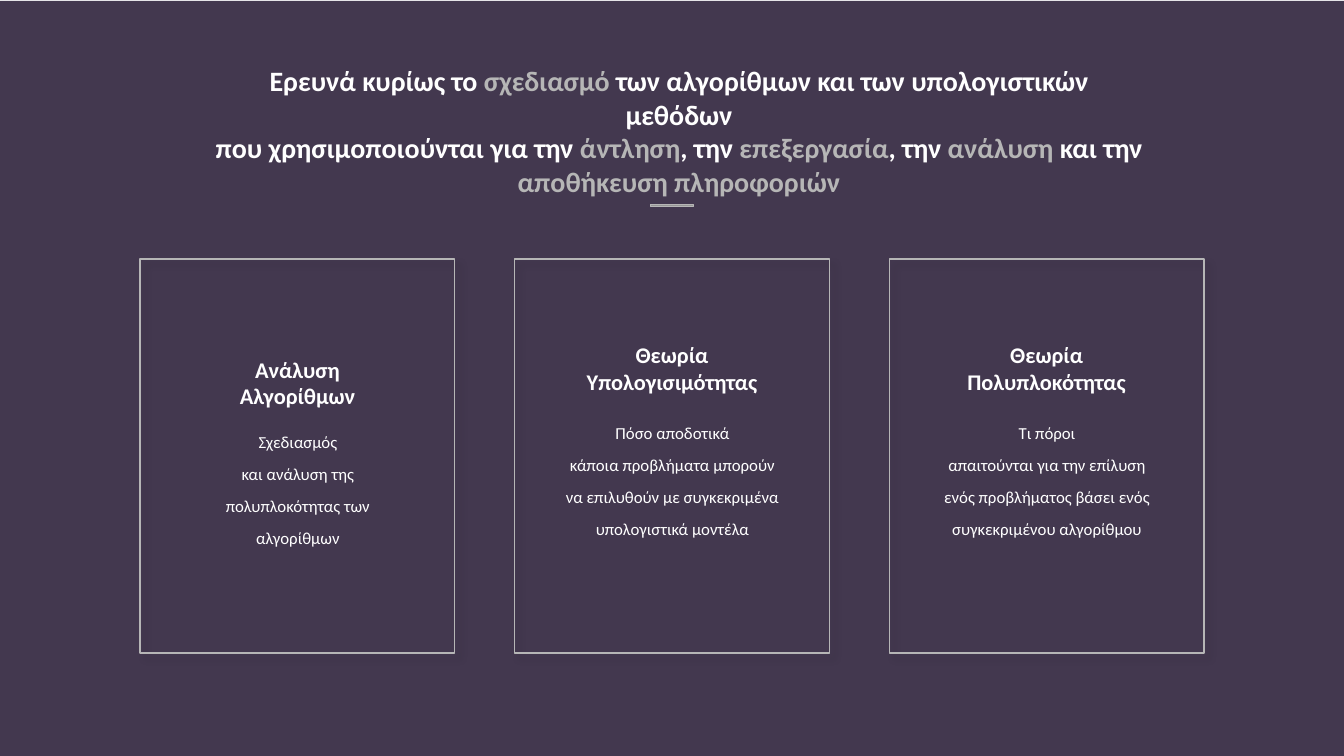
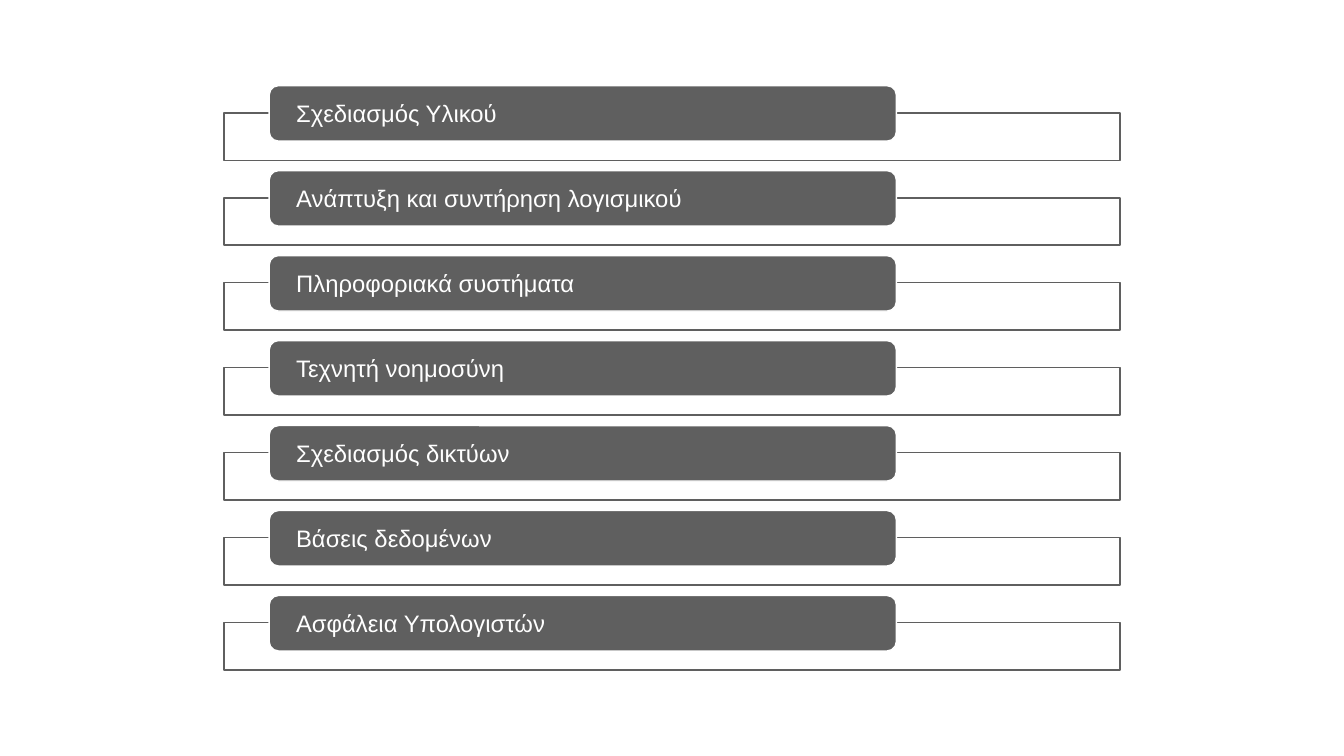
"""Build two slides on the research areas and fields of computer science."""
from dataclasses import dataclass

from lxml import etree
from pptx import Presentation
from pptx.dml.color import RGBColor
from pptx.enum.shapes import MSO_SHAPE
from pptx.enum.text import MSO_ANCHOR, MSO_AUTO_SIZE, PP_ALIGN
from pptx.oxml.ns import qn
from pptx.util import Inches, Pt

RECT = MSO_SHAPE.RECTANGLE
ROUNDED = MSO_SHAPE.ROUNDED_RECTANGLE
CENTER, LEFT = PP_ALIGN.CENTER, PP_ALIGN.LEFT
TOP, MIDDLE = MSO_ANCHOR.TOP, MSO_ANCHOR.MIDDLE
NO_AUTOFIT = MSO_AUTO_SIZE.NONE
TITLE_ONLY, BLANK = 5, 6

COLORS = {
    "night": "140724",
    "white": "FFFFFF",
    "silver": "B6B6B6",
    "rule": "969696",
    "bar": "5F5F5F",
}


@dataclass(frozen=True)
class Box:
    left: float
    top: float
    width: float
    height: float


@dataclass(frozen=True)
class TextStyle:
    font: str
    size: int
    bold: bool = False
    align: PP_ALIGN = CENTER
    spacing: float = 1.0


@dataclass(frozen=True)
class Card:
    heading: str
    lines: tuple[str, ...]
    heading_top: float = 3.34
    body_top: float = 4.02


HEADLINE_STYLE = TextStyle("Calibri", 20, bold=True)
HEADING_STYLE = TextStyle("Calibri", 16, bold=True)
BODY_STYLE = TextStyle("Calibri", 12, spacing=1.6)
FIELD_STYLE = TextStyle("Arial", 17, align=LEFT)

HEADLINE = (
    (("Ερευνά κυρίως το ", "white"), ("σχεδιασμό ", "silver"),
     ("των αλγορίθμων και των υπολογιστικών μεθόδων", "white")),
    (("που χρησιμοποιούνται για την ", "white"), ("άντληση", "silver"),
     (", την ", "white"), ("επεξεργασία", "silver"), (", την ", "white"),
     ("ανάλυση ", "silver"), ("και την", "white")),
    (("αποθήκευση πληροφοριών", "silver"),),
)

CARDS = (
    Card("Ανάλυση Αλγορίθμων",
         ("Σχεδιασμός", "και ανάλυση της", "πολυπλοκότητας των", "αλγορίθμων"),
         heading_top=3.48, body_top=4.11),
    Card("Θεωρία Υπολογισιμότητας",
         ("Πόσο αποδοτικά", "κάποια προβλήματα μπορούν",
          "να επιλυθούν με συγκεκριμένα", "υπολογιστικά μοντέλα")),
    Card("Θεωρία Πολυπλοκότητας",
         ("Τι πόροι", "απαιτούνται για την επίλυση",
          "ενός προβλήματος βάσει ενός", "συγκεκριμένου αλγορίθμου")),
)
CARD_LEFT, CARD_STEP, CARD_WIDTH = 1.39, 3.715, 3.12

FIELDS = (
    "Σχεδιασμός Υλικού",
    "Ανάπτυξη και συντήρηση λογισμικού",
    "Πληροφοριακά συστήματα",
    "Τεχνητή νοημοσύνη",
    "Σχεδιασμός δικτύων",
    "Βάσεις δεδομένων",
    "Ασφάλεια Υπολογιστών",
)
FIELD_TOP, FIELD_STEP = 0.85, 0.843


def rgb(name: str) -> RGBColor:
    return RGBColor.from_string(COLORS[name])


def inches(box: Box) -> tuple:
    return tuple(Inches(n) for n in (box.left, box.top, box.width, box.height))


def add_panel(slide, kind, box: Box, fill: str | None = None,
              line: str | None = None, alpha: int = 100):
    panel = slide.shapes.add_shape(kind, *inches(box))
    panel.shadow.inherit = False
    if fill:
        panel.fill.solid()
        panel.fill.fore_color.rgb = rgb(fill)
        if alpha < 100:
            color = panel.element.spPr.find(qn("a:solidFill"))[0]
            etree.SubElement(color, qn("a:alpha"), val=str(alpha * 1000))
    else:
        panel.fill.background()
    if line:
        panel.line.color.rgb = rgb(line)
        panel.line.width = Pt(1)
    else:
        panel.line.fill.background()
    return panel


def add_soft_shadow(panel) -> None:
    effects = panel.element.spPr.find(qn("a:effectLst"))
    shadow = etree.SubElement(
        effects, qn("a:outerShdw"), blurRad=str(Pt(5)), dist=str(Pt(5)),
        dir=str(45 * 60000), algn="tl", rotWithShape="0")
    color = etree.SubElement(shadow, qn("a:srgbClr"), val="000000")
    etree.SubElement(color, qn("a:alpha"), val="14000")


def write(frame, paragraphs, style: TextStyle, anchor=TOP,
          side: float = 0.1, edge: float = 0.05) -> None:
    frame.word_wrap = True
    frame.auto_size = NO_AUTOFIT
    frame.vertical_anchor = anchor
    frame.margin_left = frame.margin_right = Inches(side)
    frame.margin_top = frame.margin_bottom = Inches(edge)
    for index, pieces in enumerate(paragraphs):
        paragraph = frame.add_paragraph() if index else frame.paragraphs[0]
        paragraph.alignment = style.align
        paragraph.line_spacing = style.spacing
        for text, color in pieces:
            run = paragraph.add_run()
            run.text = text
            run.font.name = style.font
            run.font.size = Pt(style.size)
            run.font.bold = style.bold
            run.font.color.rgb = rgb(color)


def add_text(slide, box: Box, lines: tuple[str, ...], style: TextStyle) -> None:
    label = slide.shapes.add_textbox(*inches(box))
    write(label.text_frame, [[(line, "white")] for line in lines], style)


def add_card(slide, card: Card, left: float) -> None:
    frame = add_panel(slide, RECT, Box(left, 2.57, CARD_WIDTH, 3.91), line="silver")
    add_soft_shadow(frame)
    add_text(slide, Box(left + 0.5, card.heading_top, 2.12, 0.64),
             (card.heading,), HEADING_STYLE)
    add_text(slide, Box(left + 0.25, card.body_top, 2.63, 1.39),
             card.lines, BODY_STYLE)


def add_field(slide, field: str, top: float) -> None:
    add_panel(slide, RECT, Box(2.22, top + 0.27, 8.89, 0.47), "white", "bar", alpha=90)
    bar = add_panel(slide, ROUNDED, Box(2.67, top, 6.22, 0.55), "bar", "white")
    write(bar.text_frame, [[(field, "white")]], FIELD_STYLE, MIDDLE, side=0.24, edge=0)


def build_research_slide(deck) -> None:
    slide = deck.slides.add_slide(deck.slide_layouts[TITLE_ONLY])
    backdrop = add_panel(slide, RECT, Box(0, 0.01, 13.33, 7.5), "night", alpha=80)
    headline = slide.shapes.title
    headline.element.addprevious(backdrop.element)
    headline.left, headline.top, headline.width, headline.height = inches(
        Box(2.03, 0.58, 9.41, 1.45))
    write(headline.text_frame, HEADLINE, HEADLINE_STYLE)
    add_panel(slide, RECT, Box(6.45, 2.03, 0.43, 0.02), "rule", "silver")
    for index, card in enumerate(CARDS):
        add_card(slide, card, CARD_LEFT + index * CARD_STEP)


def build_fields_slide(deck) -> None:
    slide = deck.slides.add_slide(deck.slide_layouts[BLANK])
    for index, field in enumerate(FIELDS):
        add_field(slide, field, FIELD_TOP + index * FIELD_STEP)


def main() -> None:
    deck = Presentation()
    deck.slide_width, deck.slide_height = Inches(13.33), Inches(7.5)
    build_research_slide(deck)
    build_fields_slide(deck)
    deck.save("out.pptx")


if __name__ == "__main__":
    main()
